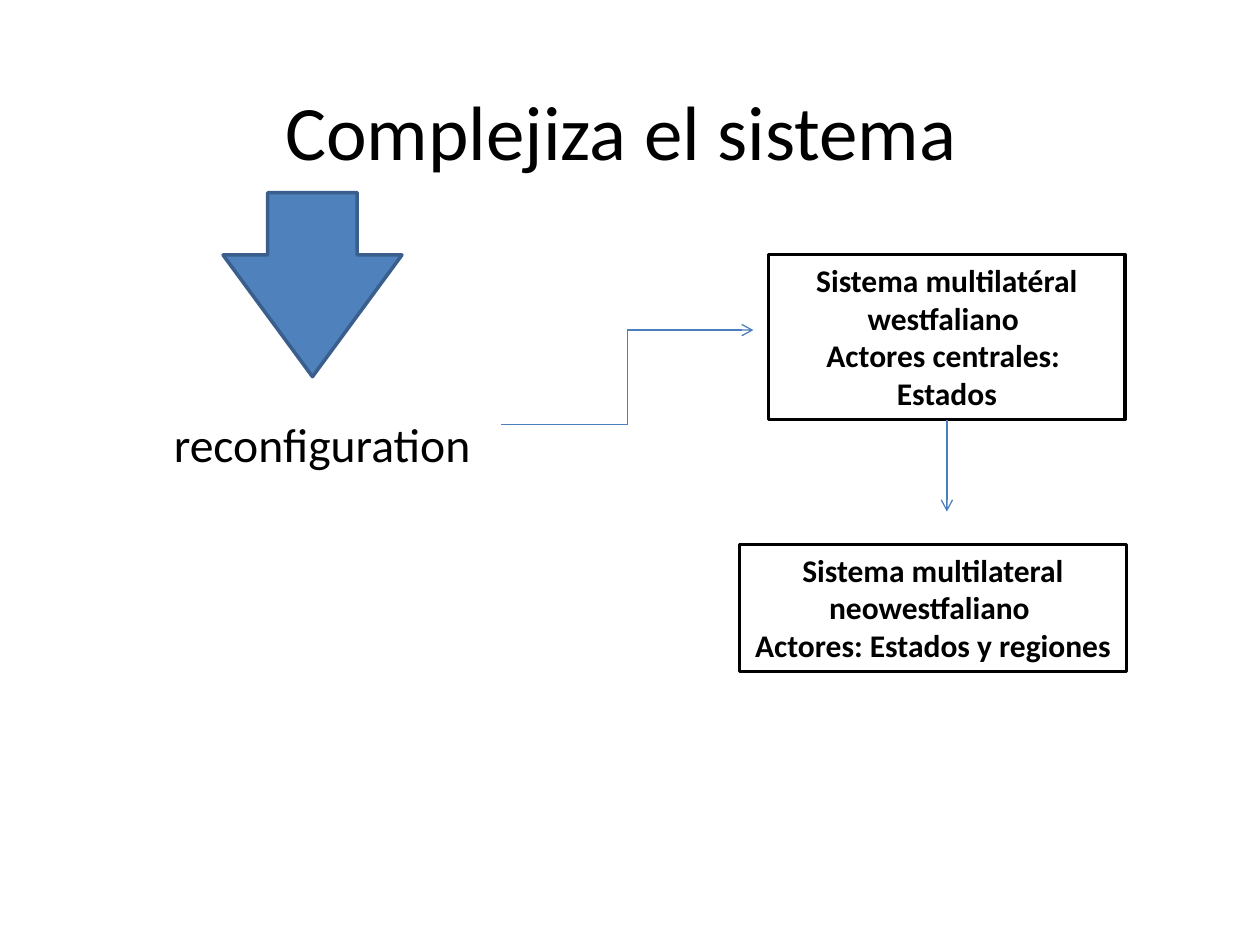
"""Build the slide on the reconfiguration of the multilateral system."""
from lxml.etree import SubElement
from pptx import Presentation
from pptx.dml.color import RGBColor
from pptx.enum.shapes import MSO_CONNECTOR, MSO_SHAPE
from pptx.enum.text import MSO_ANCHOR, MSO_AUTO_SIZE, PP_ALIGN
from pptx.oxml.ns import qn
from pptx.util import Inches, Pt

COLORS = {
    "text": "000000",
    "box": "FFFFFF",
    "border": "000000",
    "arrow": "4F81BD",
    "arrow_border": "3A5F8C",
    "connector": "4B7EBC",
}


def color(name):
    return RGBColor.from_string(COLORS[name])


def write(frame, lines, size, bold=False):
    frame.word_wrap = True
    frame.auto_size = MSO_AUTO_SIZE.NONE
    frame.text = "\n".join(lines)
    for para in frame.paragraphs:
        para.alignment = PP_ALIGN.CENTER
        for span in para.runs:
            span.font.name = "Calibri"
            span.font.size = Pt(size)
            span.font.bold = bold
            span.font.color.rgb = color("text")


def fill_placeholder(holder, bounds, text, size, anchor):
    holder.left, holder.top, holder.width, holder.height = map(Inches, bounds)
    write(holder.text_frame, [text], size)
    holder.text_frame.vertical_anchor = anchor


def remove_bullet(para):
    properties = para._p.get_or_add_pPr()
    properties.set("marL", "0")
    properties.set("indent", "0")
    SubElement(properties, qn("a:buNone"))


def add_shape(page, kind, bounds, fill, border):
    shape = page.shapes.add_shape(kind, *map(Inches, bounds))
    shape.shadow.inherit = False
    shape.fill.solid()
    shape.fill.fore_color.rgb = color(fill)
    shape.line.color.rgb = color(border)
    shape.line.width = Pt(2)
    return shape


def add_box(page, bounds, lines):
    box = add_shape(page, MSO_SHAPE.RECTANGLE, bounds, "box", "border")
    write(box.text_frame, lines, 18, bold=True)
    box.text_frame.vertical_anchor = MSO_ANCHOR.TOP
    return box


def add_arrow(page, kind, start, end):
    arrow = page.shapes.add_connector(kind, *map(Inches, start + end))
    arrow.line.color.rgb = color("connector")
    arrow.line.width = Pt(0.75)
    SubElement(arrow.line._get_or_add_ln(), qn("a:tailEnd"), type="arrow")
    SubElement(arrow._element.spPr, qn("a:effectLst"))
    return arrow


def main():
    deck = Presentation()
    deck.slide_width, deck.slide_height = Inches(10), Inches(7.5)
    page = deck.slides.add_slide(deck.slide_layouts[1])
    title, body = page.placeholders

    fill_placeholder(title, (0.5, 0.52, 9, 1.02), "Complejiza el sistema ",
                     44, MSO_ANCHOR.MIDDLE)
    fill_placeholder(body, (1.22, 3.24, 2.76, 0.61), "reconfiguration ",
                     27.2, MSO_ANCHOR.TOP)
    remove_bullet(body.text_frame.paragraphs[0])

    down_arrow = add_shape(page, MSO_SHAPE.DOWN_ARROW, (1.77, 1.53, 1.42, 1.46),
                           "arrow", "arrow_border")
    down_arrow.adjustments[1] = 0.68

    add_box(page, (5.87, 4.32, 3.07, 1.01),
            ["Sistema multilateral neowestfaliano ", "Actores: Estados y regiones"])
    add_arrow(page, MSO_CONNECTOR.ELBOW, (3.98, 3.37), (5.98, 2.62))
    westphalian = add_box(page, (6.1, 2.02, 2.83, 1.31),
                          ["Sistema multilatéral westfaliano ",
                           "Actores centrales: ", "Estados"])
    link = add_arrow(page, MSO_CONNECTOR.STRAIGHT, (7.52, 3.33), (7.52, 4.06))
    link.begin_connect(westphalian, 2)
    link.end_x = link.begin_x

    deck.save("out.pptx")


if __name__ == "__main__":
    main()
